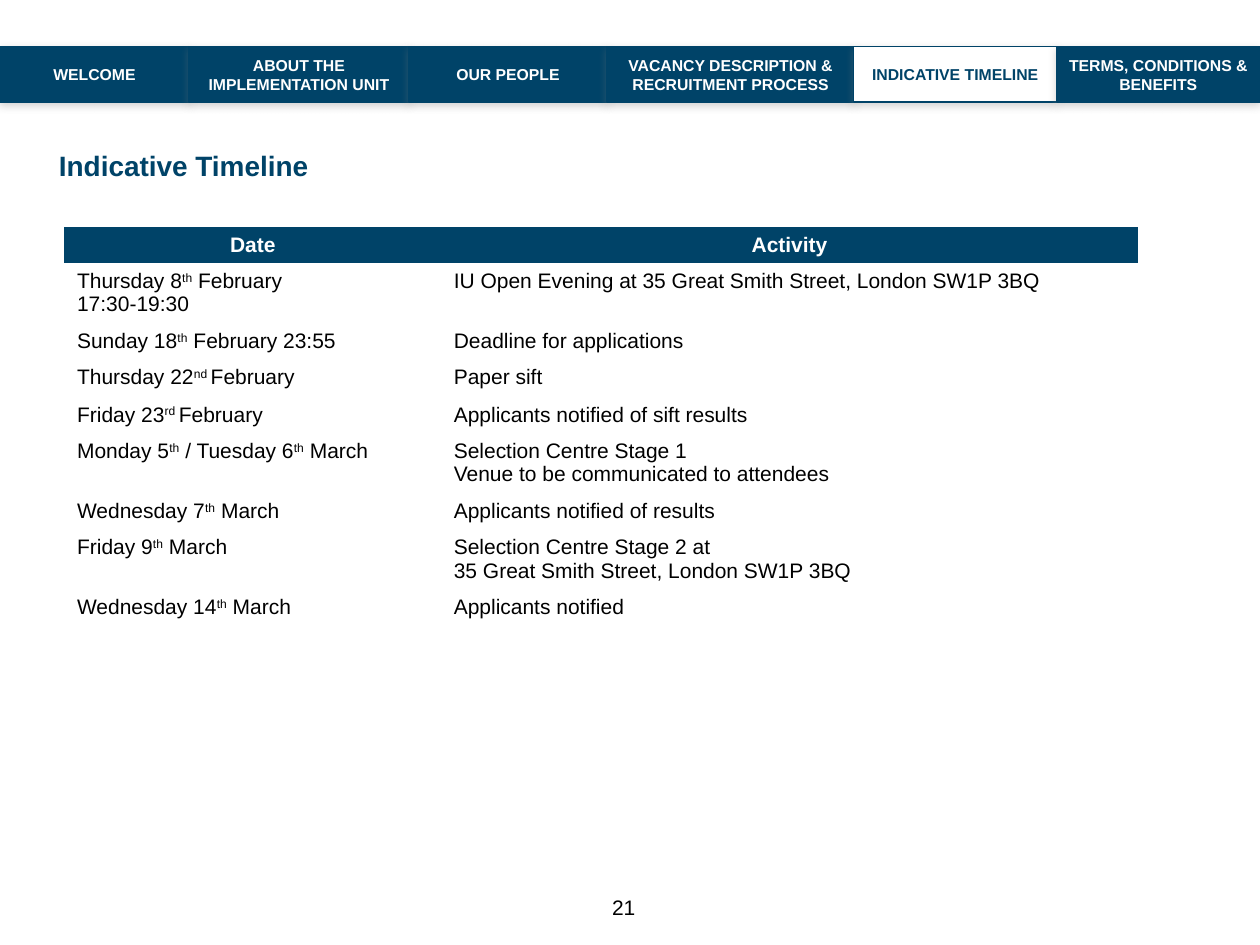
from pptx import Presentation
from pptx.dml.color import RGBColor
from pptx.enum.shapes import MSO_SHAPE as Shape
from pptx.enum.text import MSO_ANCHOR as Anchor, PP_ALIGN as Align
from pptx.oxml import parse_xml
from pptx.util import Cm, Pt

COLORS = {"navy": "004368", "white": "FFFFFF", "black": "000000", "shadow": "808080"}
FONT = "Arial"
PLAIN_TABLE = "{2D5ABB26-0587-4C30-8999-92F81FD0307C}"
SHADOW_XML = (
    '<a:effectLst xmlns:a="http://schemas.openxmlformats.org/drawingml/2006/main">'
    '<a:outerShdw blurRad="{blur}" dist="{distance}" dir="5400000" rotWithShape="0">'
    '<a:srgbClr val="{color}"><a:alpha val="35000"/></a:srgbClr>'
    "</a:outerShdw></a:effectLst>"
)
TABS = [
    ("WELCOME", 3.81),
    ("ABOUT THE IMPLEMENTATION UNIT", 4.43),
    ("OUR PEOPLE", 4),
    ("VACANCY DESCRIPTION & RECRUITMENT PROCESS", 4.97),
    ("INDICATIVE TIMELINE", 4.09),
    ("TERMS, CONDITIONS & BENEFITS", 4.1),
]
ACTIVE_TAB = "INDICATIVE TIMELINE"
COLUMN_SHARES = (0.351, 0.649)
HEADER = ("Date", "Activity")
LINE_HEIGHT = 0.48
ROW_PADDING = 0.25
TIMELINE = [
    ("Thursday 8^th^ February\n17:30-19:30",
     "IU Open Evening at 35 Great Smith Street, London SW1P 3BQ"),
    ("Sunday 18^th^ February 23:55", "Deadline for applications"),
    ("Thursday 22^nd ^February", "Paper sift"),
    ("Friday 23^rd ^February", "Applicants notified of sift results"),
    ("Monday 5^th^ / Tuesday 6^th^ March",
     "Selection Centre Stage 1\nVenue to be communicated to attendees"),
    ("Wednesday 7^th^ March", "Applicants notified of results"),
    ("Friday 9^th^ March",
     "Selection Centre Stage 2 at\n35 Great Smith Street, London SW1P 3BQ"),
    ("Wednesday 14^th^ March", "Applicants notified"),
]


def rgb(name):
    """Return the named colour."""
    return RGBColor.from_string(COLORS[name])


def format_text(text_frame, size, color, bold=False, align=Align.LEFT):
    """Format every paragraph and run of a text frame."""
    for paragraph in text_frame.paragraphs:
        paragraph.alignment = align
        for run in paragraph.runs:
            run.font.name = FONT
            run.font.size = Pt(size)
            run.font.bold = bold
            run.font.color.rgb = rgb(color)


def add_superscript_text(text_frame, text):
    """Write lines of text in which carets enclose superscripts."""
    for index, line in enumerate(text.split("\n")):
        paragraph = text_frame.add_paragraph() if index else text_frame.paragraphs[0]
        for position, part in enumerate(line.split("^")):
            run = paragraph.add_run()
            run.text = part
            if position % 2:
                run.font._element.set("baseline", "30000")


def add_label(slide, box, text, size, color, bold=False, align=Align.LEFT, right=0):
    """Add a vertically centred text box without padding."""
    text_frame = slide.shapes.add_textbox(*map(Cm, box)).text_frame
    text_frame.word_wrap = True
    text_frame.vertical_anchor = Anchor.MIDDLE
    text_frame.margin_left = text_frame.margin_top = text_frame.margin_bottom = 0
    text_frame.margin_right = Cm(right)
    text_frame.text = text
    format_text(text_frame, size, color, bold, align)


def add_navigation(slide, box):
    """Add the row of tabs with the active one inverted."""
    left, top, width, height = box
    scale = width / sum(tab_width for _, tab_width in TABS)
    for text, tab_width in TABS:
        fill, color = ("white", "navy") if text == ACTIVE_TAB else ("navy", "white")
        tab = slide.shapes.add_shape(
            Shape.RECTANGLE, Cm(left), Cm(top), Cm(tab_width * scale), Cm(height))
        tab.fill.solid()
        tab.fill.fore_color.rgb = rgb(fill)
        tab.line.color.rgb = rgb("navy")
        tab.line.width = Pt(0.75)
        tab._element.spPr.append(parse_xml(SHADOW_XML.format(
            blur=Pt(5), distance=Pt(1.8), color=COLORS["shadow"])))
        tab.text_frame.word_wrap = True
        tab.text_frame.vertical_anchor = Anchor.MIDDLE
        tab.text_frame.text = text
        format_text(tab.text_frame, 9, color, True, Align.CENTER)
        left += tab_width * scale


def add_timeline(slide, box):
    """Add the table of dates and activities."""
    rows = [HEADER, *TIMELINE]
    frame = slide.shapes.add_table(len(rows), len(HEADER), *map(Cm, box))
    table = frame.table
    table.horz_banding = False
    table._tbl.tblPr.find("{*}tableStyleId").text = PLAIN_TABLE
    for column, share in zip(table.columns, COLUMN_SHARES):
        column.width = Cm(box[2] * share)
    for row, texts in zip(table.rows, rows):
        lines = 1 + max(text.count("\n") for text in texts)
        row.height = Cm(ROW_PADDING + lines * LINE_HEIGHT)
        for cell, text in zip(row.cells, texts):
            add_superscript_text(cell.text_frame, text)
            if texts is HEADER:
                cell.fill.solid()
                cell.fill.fore_color.rgb = rgb("navy")
                format_text(cell.text_frame, 12, "white", True, Align.CENTER)
            else:
                cell.fill.background()
                format_text(cell.text_frame, 12, "black")
    table.rows[3].height = Cm(0.76)


def main():
    """Build and save the slide."""
    presentation = Presentation()
    presentation.slide_width, presentation.slide_height = Cm(25.4), Cm(19.05)
    slide = presentation.slides.add_slide(presentation.slide_layouts[6])
    add_timeline(slide, (1.3, 4.57, 21.64, 8.0))
    add_label(slide, (1.19, 2.85, 23.02, 0.95), "Indicative Timeline", 16, "navy", True)
    add_navigation(slide, (0, 0.94, 25.4, 1.12))
    add_label(slide, (0, 17.53, 25.4, 1.52), "21", 12, "black",
              align=Align.CENTER, right=0.25)
    presentation.save("out.pptx")


if __name__ == "__main__":
    main()
